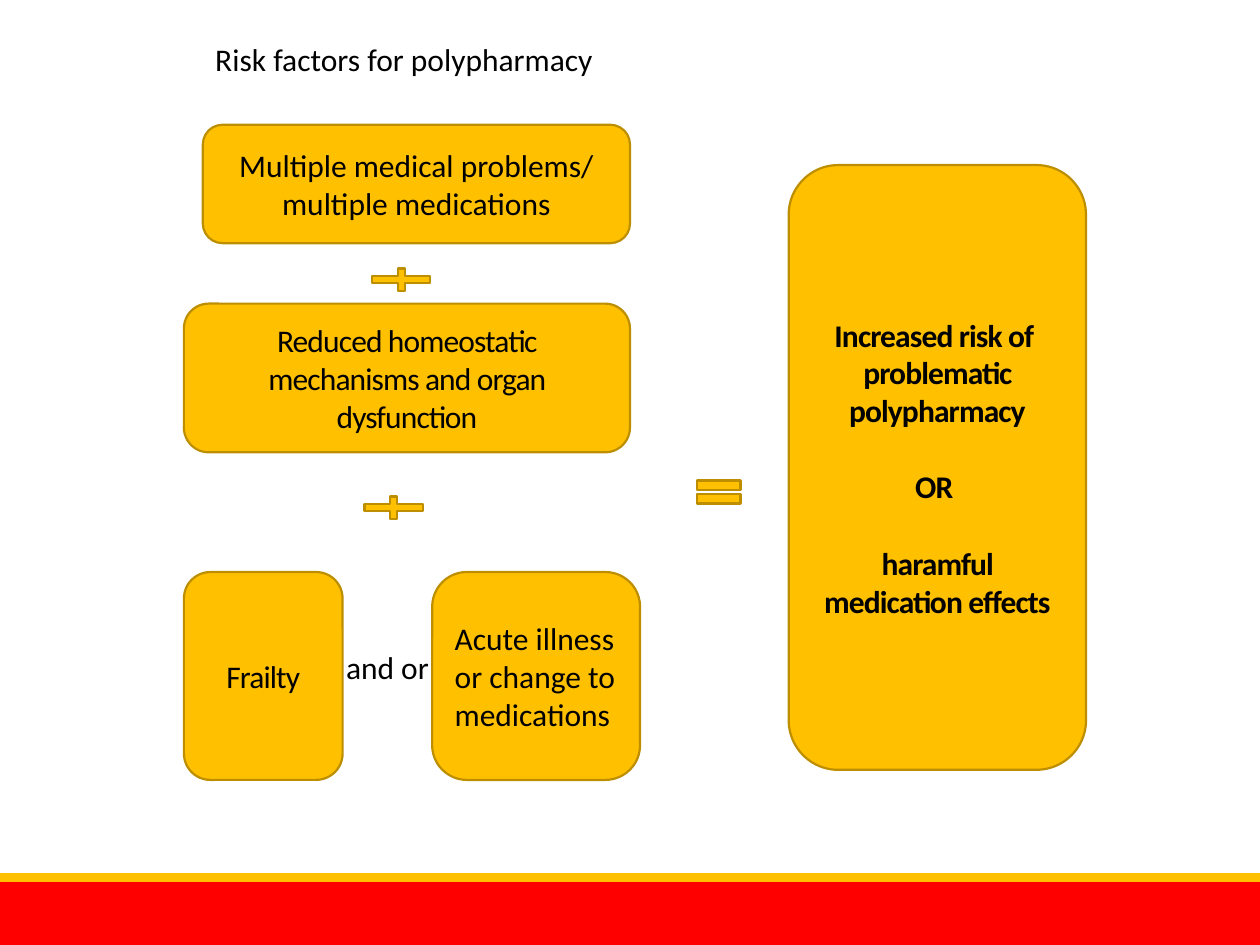
"""Build the slide on risk factors for polypharmacy."""
import pptx
import pptx.util
from dataclasses import dataclass
from pptx.dml.color import RGBColor
from pptx.enum.shapes import MSO_SHAPE
from pptx.enum.text import MSO_ANCHOR, PP_ALIGN


@dataclass(frozen=True)
class Theme:
    font: str = "Calibri"
    size: float = 18
    text: str = "000000"
    amber: str = "FFC000"
    edge: str = "BD8E00"
    red: str = "FF0000"
    edge_width: float = 1.25
    tight: int = -50
    section_gap: float = 22


THEME = Theme()
WIDTH, HEIGHT = 10, 7.5
LEFT, CENTER = PP_ALIGN.LEFT, PP_ALIGN.CENTER

# Places are left, top, width and height in percent of the slide.
BANDS = [
    ((0, 93.33, 100, 6.67), THEME.red),
    ((0, 92.4, 100, 0.93), THEME.amber),
]
FACTORS = [
    ((16.1, 13.2, 33.9, 12.53), "Multiple medical problems/ multiple medications", CENTER, False),
    ((14.6, 32.13, 35.4, 15.73), "Reduced homeostatic mechanisms and organ dysfunction", CENTER, True),
    ((14.6, 60.53, 12.6, 22), "Frailty", CENTER, True),
    ((34.3, 60.53, 16.5, 22), "Acute illness or change to medications", LEFT, False),
]
OUTCOME_PLACE = (62.6, 17.47, 23.6, 64)
OUTCOME = [
    ["Increased risk of ", "problematic polypharmacy"],
    ["OR "],
    ["haramful medication effects"],
]
SIGNS = [
    (MSO_SHAPE.MATH_PLUS, (28.7, 28, 6.3, 3.2)),
    (MSO_SHAPE.MATH_EQUAL, (54.7, 50, 4.7, 4.13)),
    (MSO_SHAPE.MATH_PLUS, (28.1, 52.13, 6.3, 3.2)),
]
LABELS = [
    ((16.1, 3.6, 57.5, 5.33), "Risk factors for polypharmacy", LEFT, True),
    ((26.4, 67.87, 8.7, 5.33), "and or", CENTER, False),
]


def box(place):
    return [pptx.util.Inches(share * side / 100)
            for share, side in zip(place, (WIDTH, HEIGHT) * 2)]


def add_shape(s, kind, place, fill, edge=None):
    sp = s.shapes.add_shape(kind, *box(place))
    sp.shadow.inherit = False
    sp.fill.solid()
    sp.fill.fore_color.rgb = RGBColor.from_string(fill)
    if edge:
        sp.line.color.rgb = RGBColor.from_string(edge)
        sp.line.width = pptx.util.Pt(THEME.edge_width)
    else:
        sp.line.fill.background()
    return sp


def write(sp, sections, align, tight=False, bold=False, wrap=True):
    tf = sp.text_frame
    tf.word_wrap = wrap
    tf.text = "\n".join(line for lines in sections for line in lines)
    starts, count = set(), 0
    for lines in sections:
        starts.add(count)
        count += len(lines)
    for i, p in enumerate(tf.paragraphs):
        p.alignment = align
        if i and i in starts:
            p.space_before = pptx.util.Pt(THEME.section_gap)
        for r in p.runs:
            r.font.name = THEME.font
            r.font.size = pptx.util.Pt(THEME.size)
            r.font.bold = bold
            r.font.color.rgb = RGBColor.from_string(THEME.text)
            if tight:
                r.font._element.set("spc", str(THEME.tight))


def add_card(s, place, sections, align, tight, bold=False):
    sp = add_shape(s, MSO_SHAPE.ROUNDED_RECTANGLE, place, THEME.amber, THEME.edge)
    sp.text_frame.vertical_anchor = MSO_ANCHOR.MIDDLE
    write(sp, sections, align, tight, bold)


def main():
    prs = pptx.Presentation()
    prs.slide_width = pptx.util.Inches(WIDTH)
    prs.slide_height = pptx.util.Inches(HEIGHT)
    s = prs.slides.add_slide(prs.slide_layouts[6])
    for place, fill in BANDS:
        add_shape(s, MSO_SHAPE.RECTANGLE, place, fill)
    for place, text, align, tight in FACTORS:
        add_card(s, place, [[text]], align, tight)
    add_card(s, OUTCOME_PLACE, OUTCOME, CENTER, True, True)
    for kind, place in SIGNS:
        add_shape(s, kind, place, THEME.amber, THEME.edge)
    for place, text, align, wrap in LABELS:
        write(s.shapes.add_textbox(*box(place)), [[text]], align, wrap=wrap)
    prs.save("out.pptx")


if __name__ == "__main__":
    main()
